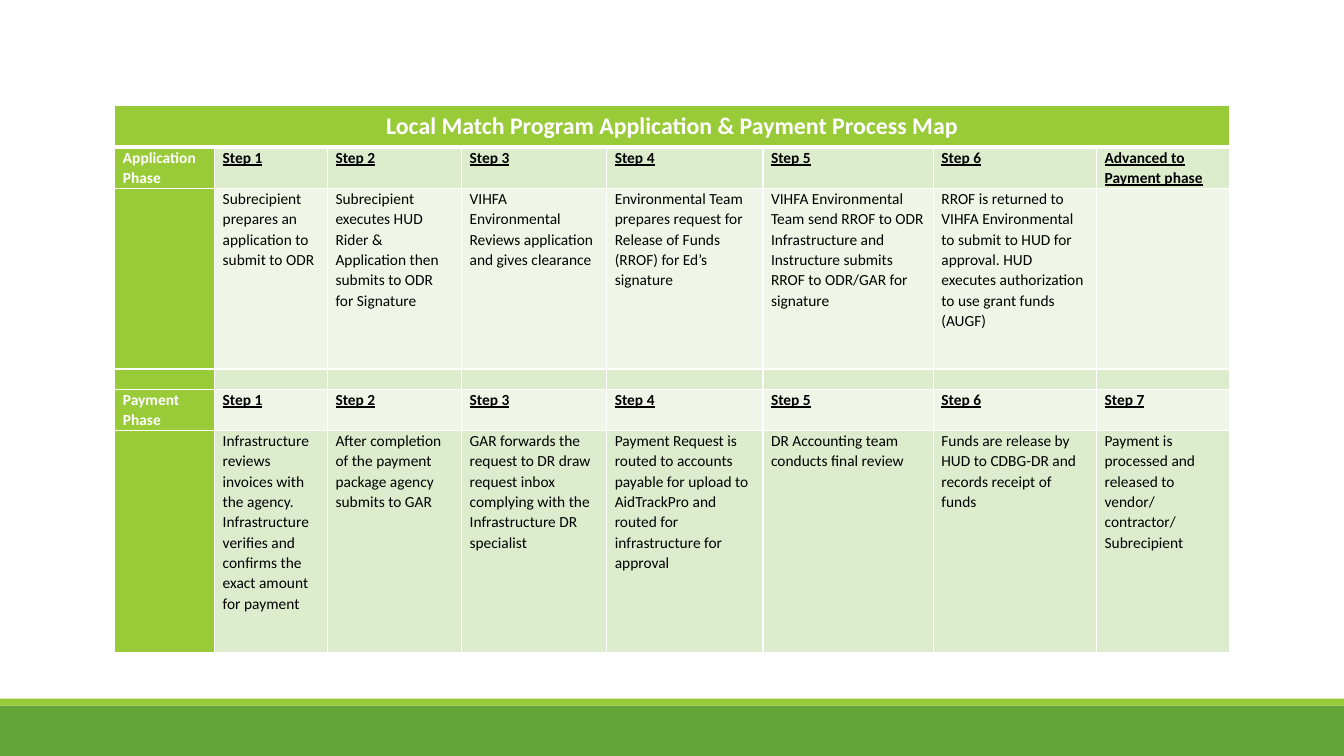
from lxml.etree import SubElement
from pptx import Presentation
from pptx.dml.color import RGBColor
from pptx.enum.shapes import MSO_SHAPE
from pptx.enum.text import PP_ALIGN
from pptx.oxml import parse_xml
from pptx.oxml.ns import nsdecls, qn
from pptx.util import Pt

WHITE = RGBColor(0xFF, 0xFF, 0xFF)
BLACK = RGBColor(0x00, 0x00, 0x00)
LIME = RGBColor(0x99, 0xCB, 0x38)
GREEN = RGBColor(0x63, 0xA5, 0x37)
PALE = RGBColor(0xDE, 0xEC, 0xCE)
PALER = RGBColor(0xEF, 0xF6, 0xE8)

FONT = "Calibri"
BODY_SIZE = 11
SLIDE_WIDTH, SLIDE_HEIGHT = 960, 540
COLUMN_WIDTHS = [71.3, 80.6, 95.8, 103.7, 111.6, 121.7, 116.6, 95]
ROW_HEIGHTS = [30.2, 29.5, 128.9, 14.4, 29.5, 158.4]

TITLE = "Local Match Program Application & Payment Process Map"
STEPS = [f"Step {number}" for number in range(1, 8)]
PROCESS_ROWS = [
    ["Application Phase", *STEPS[:6], "Advanced to Payment phase"],
    [
        "",
        "Subrecipient prepares an application to submit to ODR",
        "Subrecipient executes HUD Rider & Application then submits to ODR for Signature",
        "VIHFA Environmental Reviews application and gives clearance",
        "Environmental Team prepares request for Release of Funds (RROF) for Ed’s signature",
        "VIHFA Environmental Team send RROF to ODR Infrastructure and Instructure "
        "submits RROF to ODR/GAR for signature",
        "RROF is returned to VIHFA Environmental to submit to HUD for approval. "
        "HUD executes authorization to use grant funds (AUGF)",
        "",
    ],
    [""] * 8,
    ["Payment Phase", *STEPS],
    [
        "",
        "Infrastructure reviews invoices with the agency. Infrastructure verifies "
        "and confirms the exact amount for payment",
        "After completion of the payment package agency submits to GAR",
        "GAR forwards the request to DR draw request inbox complying with the "
        "Infrastructure DR specialist",
        "Payment Request is routed to accounts payable for upload to AidTrackPro "
        "and routed for infrastructure for approval",
        "DR Accounting team conducts final review",
        "Funds are release by HUD to CDBG-DR and records receipt of funds",
        "Payment is processed and released to vendor/ contractor/ Subrecipient",
    ],
]


def add_bar(slide, top, height, color):
    bar = slide.shapes.add_shape(
        MSO_SHAPE.RECTANGLE, Pt(0), Pt(top), Pt(SLIDE_WIDTH), Pt(height)
    )
    bar.shadow.inherit = False
    bar.fill.solid()
    bar.fill.fore_color.rgb = color
    bar.line.fill.background()


def format_cell(cell, fill, side_margin, end_margin, top_line=1, bottom_line=1):
    """Set the fill, the insets and the white borders of a cell."""
    cell.margin_left = cell.margin_right = Pt(side_margin)
    cell.margin_top = cell.margin_bottom = Pt(end_margin)
    cell.fill.solid()
    cell.fill.fore_color.rgb = fill
    properties = cell._tc.get_or_add_tcPr()
    borders = {"lnL": 1, "lnR": 1, "lnT": top_line, "lnB": bottom_line}
    for position, (tag, width) in enumerate(borders.items()):
        border = parse_xml(
            f'<a:{tag} {nsdecls("a")} w="{Pt(width)}"><a:solidFill>'
            f'<a:srgbClr val="{WHITE}"/></a:solidFill></a:{tag}>'
        )
        properties.insert(position, border)


def write_cell(cell, text, size, color, bold=False, underline=False):
    paragraph = cell.text_frame.paragraphs[0]
    paragraph.line_spacing = 1.07
    paragraph.space_after = Pt(8)
    if not text:
        # The end mark's size keeps an empty row from growing.
        SubElement(paragraph._p, qn("a:endParaRPr"), sz=str(size * 100))
        return
    run = paragraph.add_run()
    run.text = text
    run.font.name = FONT
    run.font.size = Pt(size)
    run.font.color.rgb = color
    run.font.bold = bold
    run.font.underline = underline


def add_title_row(table):
    for column in range(len(COLUMN_WIDTHS)):
        format_cell(table.cell(0, column), LIME, 7.2, 3.6, bottom_line=3)
    title_cell = table.cell(0, 0)
    title_cell.merge(table.cell(0, len(COLUMN_WIDTHS) - 1))
    write_cell(title_cell, TITLE, 17, WHITE, bold=True)
    title_cell.text_frame.paragraphs[0].alignment = PP_ALIGN.CENTER


def add_process_row(table, row, texts):
    is_heading = bool(texts[0])
    band = PALE if row % 2 else PALER
    for column, text in enumerate(texts):
        is_phase = column == 0
        cell = table.cell(row, column)
        format_cell(cell, LIME if is_phase else band, 5.8, 0, top_line=3 if row == 1 else 1)
        write_cell(
            cell,
            text,
            BODY_SIZE,
            WHITE if is_phase else BLACK,
            bold=is_heading,
            underline=is_heading and not is_phase,
        )


def add_process_table(slide):
    frame = slide.shapes.add_table(
        len(ROW_HEIGHTS), len(COLUMN_WIDTHS),
        Pt(82), Pt(75), Pt(sum(COLUMN_WIDTHS)), Pt(sum(ROW_HEIGHTS)),
    )
    table = frame.table
    table.first_row = table.horz_banding = False
    for column, width in zip(table.columns, COLUMN_WIDTHS):
        column.width = Pt(width)
    for row, height in zip(table.rows, ROW_HEIGHTS):
        row.height = Pt(height)
    add_title_row(table)
    for row, texts in enumerate(PROCESS_ROWS, start=1):
        add_process_row(table, row, texts)


def main():
    presentation = Presentation()
    presentation.slide_width = Pt(SLIDE_WIDTH)
    presentation.slide_height = Pt(SLIDE_HEIGHT)
    slide = presentation.slides.add_slide(presentation.slide_layouts[6])
    add_bar(slide, 504, 36, GREEN)
    add_bar(slide, 499, 5, LIME)
    add_process_table(slide)
    presentation.save("out.pptx")


if __name__ == "__main__":
    main()
